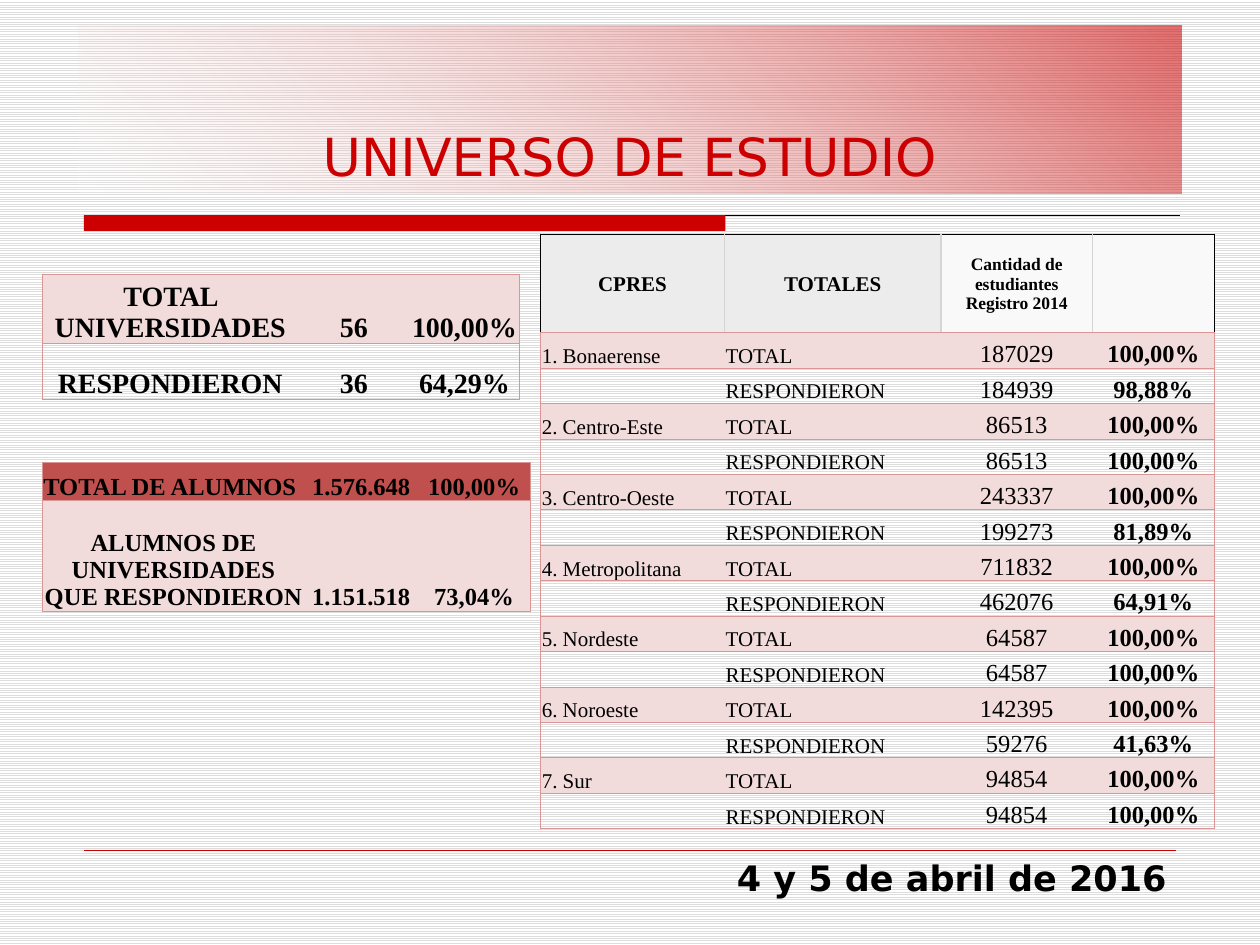
from lxml import etree
from pptx import Presentation
from pptx.dml.color import RGBColor
from pptx.enum.dml import MSO_PATTERN
from pptx.enum.shapes import MSO_CONNECTOR, MSO_SHAPE
from pptx.enum.text import MSO_ANCHOR, PP_ALIGN
from pptx.oxml.ns import qn
from pptx.util import Pt

LEFT, CENTER, RIGHT = PP_ALIGN.LEFT, PP_ALIGN.CENTER, PP_ALIGN.RIGHT
BOTTOM, MIDDLE = MSO_ANCHOR.BOTTOM, MSO_ANCHOR.MIDDLE
LIGHT_HORIZONTAL = MSO_PATTERN.LIGHT_HORIZONTAL
STRAIGHT = MSO_CONNECTOR.STRAIGHT
RECTANGLE = MSO_SHAPE.RECTANGLE

SANS, SERIF = "DejaVu Sans", "Times New Roman"
RED, BLACK, ROSE, BRICK, GRID = "CC0000", "000000", "F2DCDB", "C0504D", "DA9694"
NO_STYLE = "{2D5ABB26-0587-4C30-8999-92F81FD0307C}"
ROSE_EDGE, BLACK_EDGE, GRAY_EDGE = (GRID, 0.5), (BLACK, 1), ("D5D5D5", 1)

REGIONS = [
    ("1. Bonaerense", "187029", "184939", "98,88%"),
    ("2. Centro-Este", "86513", "86513", "100,00%"),
    ("3. Centro-Oeste", "243337", "199273", "81,89%"),
    ("4. Metropolitana", "711832", "462076", "64,91%"),
    ("5. Nordeste", "64587", "64587", "100,00%"),
    ("6. Noroeste", "142395", "59276", "41,63%"),
    ("7. Sur", "94854", "94854", "100,00%"),
]


def color(value):
    return RGBColor.from_string(value)


def add_text(frame, text, size, font, tint=BLACK, bold=False, align=CENTER):
    para = frame.paragraphs[0]
    para.alignment = align
    span = para.add_run()
    span.text = text
    span.font.size = Pt(size)
    span.font.name = font
    span.font.bold = bold
    span.font.color.rgb = color(tint)


def add_rule(page, left, top, right, tint, weight):
    rule = page.shapes.add_connector(STRAIGHT, Pt(left), Pt(top), Pt(right), Pt(top))
    rule.line.color.rgb = color(tint)
    rule.line.width = Pt(weight)
    etree.SubElement(rule._element.spPr, qn("a:effectLst"))


def add_background(page):
    fill = page.background.fill
    fill.patterned()
    fill.pattern = LIGHT_HORIZONTAL
    fill.fore_color.rgb = color("DDDDDD")
    fill.back_color.rgb = color("FFFFFF")


def add_title(page, left, top, width, height):
    title = page.shapes.title
    title.left, title.top = Pt(left), Pt(top)
    title.width, title.height = Pt(width), Pt(height)
    title.text_frame.vertical_anchor = BOTTOM
    add_text(title.text_frame, "UNIVERSO DE ESTUDIO", 30, SANS, RED)

    # Translucent gradient towards the top right
    title.fill.gradient()
    title.fill.gradient_angle = 45
    stops = zip(title.fill.gradient_stops, (0, 1), ("FFFFFF", RED), (16, 57))
    for stop, position, tint, opacity in stops:
        stop.position = position
        stop.color.rgb = color(tint)
        alpha = etree.SubElement(stop._gs.find(qn("a:srgbClr")), qn("a:alpha"))
        alpha.set("val", str(opacity * 1000))


def add_divider(page, left, top, width, height):
    add_rule(page, left, top, left + width, BLACK, 0.75)
    bar = page.shapes.add_shape(
        RECTANGLE, Pt(left), Pt(top), Pt(width * 0.585), Pt(height))
    bar.shadow.inherit = False
    bar.fill.solid()
    bar.fill.fore_color.rgb = color(RED)
    bar.line.fill.background()


def add_footer(page, left, top, width, height):
    add_rule(page, 48, top, 672, RED, 0.25)
    box = page.shapes.add_textbox(Pt(left), Pt(top), Pt(width), Pt(height))
    box.text_frame.word_wrap = True
    add_text(box.text_frame, "4 y 5 de abril de 2016", 20, SANS, bold=True, align=RIGHT)


def set_borders(cell, edges):
    """Draw the given edges, keyed L, R, T and B."""
    properties = cell._tc.get_or_add_tcPr()
    for side in "LRTB":
        if side in edges:
            tint, weight = edges[side]
            line = etree.SubElement(
                properties, qn("a:ln" + side), w=str(int(Pt(weight))))
            solid = etree.SubElement(line, qn("a:solidFill"))
            etree.SubElement(solid, qn("a:srgbClr"), val=tint)


def fill_cell(cell, text, size, bold, align, fill, edges, anchor=BOTTOM):
    cell.margin_left = cell.margin_top = cell.margin_right = Pt(0.72)
    cell.margin_bottom = Pt(0)
    cell.vertical_anchor = anchor
    if text:
        add_text(cell.text_frame, text, size, SERIF, bold=bold, align=align)
    else:
        # Keeps an empty cell from stretching its row
        etree.SubElement(cell.text_frame.paragraphs[0]._p, qn("a:endParaRPr"),
                         sz=str(size * 100))
    set_borders(cell, edges)
    if fill:
        cell.fill.solid()
        cell.fill.fore_color.rgb = color(fill)
    else:
        cell.fill.background()


def add_grid(page, left, top, widths, heights):
    frame = page.shapes.add_table(len(heights), len(widths), Pt(left), Pt(top),
                                  Pt(sum(widths)), Pt(sum(heights)))
    grid = frame.table
    grid.first_row = grid.horz_banding = False
    grid._tbl.tblPr.find(qn("a:tableStyleId")).text = NO_STYLE
    for column, width in zip(grid.columns, widths):
        column.width = Pt(width)
    for row, height in zip(grid.rows, heights):
        row.height = Pt(height)
    return grid


def row_edges(column, count):
    edges = {"T": ROSE_EDGE, "B": ROSE_EDGE}
    if column == 0:
        edges["L"] = ROSE_EDGE
    if column == count - 1:
        edges["R"] = ROSE_EDGE
    return edges


def fill_rows(grid, first, rows, fills, styles):
    """Fill the rows; styles holds size, bold and alignment for each column."""
    for offset, (row, fill) in enumerate(zip(rows, fills)):
        for column, (text, style) in enumerate(zip(row, styles)):
            fill_cell(grid.cell(first + offset, column), text, *style, fill,
                      row_edges(column, len(row)))


def add_region_table(page, left, top):
    rows = []
    for name, total, answered, share in REGIONS:
        rows += [(name, "TOTAL", total, "100,00%"),
                 ("", "RESPONDIERON", answered, share)]
    grid = add_grid(page, left, top, (105.1, 123.8, 86.4, 69.8),
                    [56.16] + [20.26] * len(rows))

    # Header: text, size, fill, left and right edges
    headers = [
        ("CPRES", 12, "ECECEC", {"L": BLACK_EDGE, "R": GRAY_EDGE}),
        ("TOTALES", 12, "ECECEC", {"L": GRAY_EDGE, "R": GRAY_EDGE}),
        ("Cantidad de estudiantes Registro 2014", 10, "F9F9F9", {"L": GRAY_EDGE}),
        ("", 10, "F9F9F9", {"R": BLACK_EDGE}),
    ]
    for column, (text, size, fill, sides) in enumerate(headers):
        edges = {"T": BLACK_EDGE, "B": ROSE_EDGE, **sides}
        fill_cell(grid.cell(0, column), text, size, True, CENTER, fill, edges, MIDDLE)

    styles = [(12, False, LEFT)] * 2 + [(14, False, CENTER), (14, True, CENTER)]
    fill_rows(grid, 1, rows, [ROSE, None] * len(REGIONS), styles)


def add_summary_table(page, left, top, widths, heights, rows, fills, size):
    grid = add_grid(page, left, top, widths, heights)
    fill_rows(grid, 0, rows, fills, [(size, True, CENTER)] * len(widths))
    return grid


def main():
    deck = Presentation()
    deck.slide_width, deck.slide_height = Pt(720), Pt(540)
    page = deck.slides.add_slide(deck.slide_layouts[5])

    add_background(page)
    add_divider(page, 48, 123, 626.5, 9)
    add_title(page, 45, 14.5, 630, 96)
    add_footer(page, 24, 486, 650, 31)
    add_region_table(page, 308.9, 134)
    add_summary_table(
        page, 24, 157, (146.6, 63.2, 63.2), (38.9, 32.2),
        [("TOTAL UNIVERSIDADES", "56", "100,00%"),
         ("RESPONDIERON", "36", "64,29%")],
        (ROSE, None), 16)
    students = add_summary_table(
        page, 24, 264.3, (150.2, 64.5, 64.5), (21.6, 63.4),
        [("TOTAL DE ALUMNOS", "1.576.648", "100,00%"),
         ("ALUMNOS DE UNIVERSIDADES QUE RESPONDIERON", "1.151.518", "73,04%")],
        (BRICK, ROSE), 14)
    students.cell(0, 0).text_frame.paragraphs[0].alignment = LEFT

    deck.save("out.pptx")


if __name__ == "__main__":
    main()
